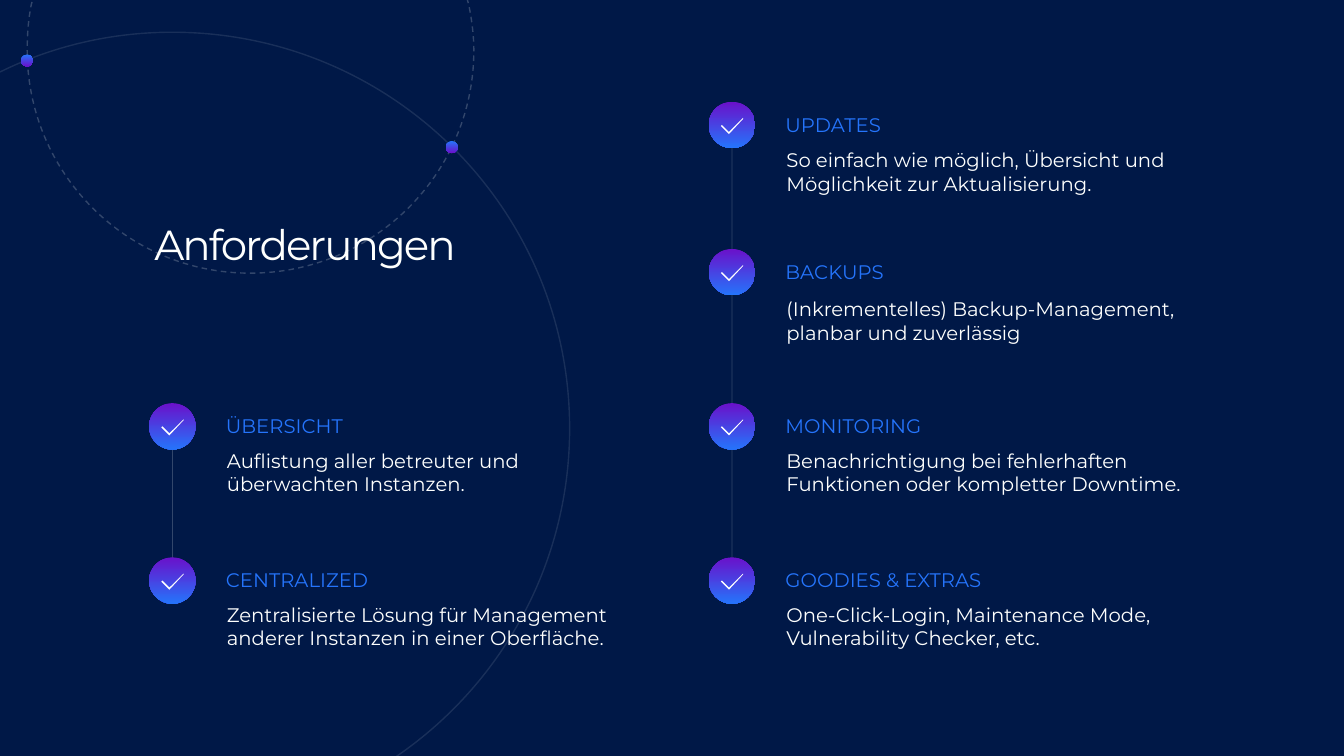
from lxml import etree
from pptx import Presentation
from pptx.dml.color import RGBColor
from pptx.enum.dml import MSO_LINE
from pptx.enum.shapes import MSO_CONNECTOR, MSO_SHAPE
from pptx.enum.text import MSO_ANCHOR, MSO_AUTO_SIZE, PP_ALIGN
from pptx.oxml.ns import qn
from pptx.util import Inches, Pt

FONT = "Montserrat"
NAVY, WHITE, BLUE, PURPLE = "001847", "FEFFFE", "2574FB", "6A11CA"
ICON_SIZE = 0.46
DOT_SIZE = 0.12
CHECK_MARK = [(0.34, 0.16), (0.2, 0.3), (0.13, 0.23), (0.12, 0.24),
              (0.2, 0.32), (0.21, 0.31), (0.34, 0.17)]
SMALL_ORBIT = [
    [(0.35, -0.1)],
    [(4.61, -0.1)],
    [(4.65, 0.05)],
    [(4.68, 0.2), (4.7, 0.35), (4.7, 0.5)],
    [(4.7, 1.72), (3.71, 2.71), (2.48, 2.71)],
    [(1.26, 2.71), (0.27, 1.72), (0.27, 0.5)],
    [(0.27, 0.35), (0.28, 0.2), (0.31, 0.05)],
]
LARGE_ORBIT = [
    [(1.71, 0.32)],
    [(3.89, 0.32), (5.65, 2.08), (5.65, 4.25)],
    [(5.65, 5.61), (4.96, 6.81), (3.91, 7.52)],
    [(3.64, 7.68)],
    [(-0.12, 7.68)],
    [(-0.12, 0.77)],
    [(0.01, 0.71)],
    [(0.52, 0.46), (1.1, 0.32), (1.71, 0.32)],
]
COLUMNS = [
    (7.03, [
        (1.01, 1.12, 1.47, "UPDATES",
         "So einfach wie möglich, Übersicht und Möglichkeit zur Aktualisierung."),
        (2.47, 2.58, 2.95, "BACKUPS",
         "(Inkrementelles) Backup-Management, planbar und zuverlässig"),
        (4, 4.11, 4.45, "MONITORING",
         "Benachrichtigung bei fehlerhaften Funktionen oder kompletter Downtime."),
        (5.53, 5.63, 5.98, "GOODIES & EXTRAS",
         "One-Click-Login, Maintenance Mode, Vulnerability Checker, etc."),
    ]),
    (1.48, [
        (4, 4.11, 4.45, "ÜBERSICHT",
         "Auflistung aller betreuter und überwachten Instanzen."),
        (5.53, 5.63, 5.98, "CENTRALIZED",
         "Zentralisierte Lösung für Management anderer Instanzen in einer Oberfläche."),
    ]),
]


def color(hex_value):
    """Turn a hex string into a colour."""
    return RGBColor.from_string(hex_value)


def style_line(shape, width, opacity):
    """Give a shape or connector a translucent white line."""
    shape.line.color.rgb = color(WHITE)
    shape.line.width = Pt(width)
    color_element = shape.line._get_or_add_ln().find(".//" + qn("a:srgbClr"))
    etree.SubElement(color_element, qn("a:alpha"), val=str(opacity * 1000))


def add_outline(shapes, points):
    """Add a closed freeform through points given in inches."""
    corners = [(Inches(x), Inches(y)) for x, y in points]
    builder = shapes.build_freeform(*corners[0])
    builder.add_line_segments(corners[1:], close=True)
    shape = builder.convert_to_shape()
    shape.shadow.inherit = False
    return shape


def add_orbit(shapes, segments, opacity):
    """Add an outline whose three-point segments are Bézier curves."""
    orbit = add_outline(shapes, [point for segment in segments for point in segment])
    lines = iter(orbit._element.findall(".//" + qn("a:lnTo")))
    for segment in segments[1:]:
        pieces = [next(lines) for _ in segment]
        if len(pieces) == 3:
            curve = etree.Element(qn("a:cubicBezTo"))
            pieces[0].addprevious(curve)
            for piece in pieces:
                curve.append(piece[0])
                piece.getparent().remove(piece)
    orbit.fill.background()
    style_line(orbit, 1, opacity)
    return orbit


def add_gradient_circle(shapes, left, top, size, top_color, bottom_color):
    """Add a circle with a vertical gradient."""
    circle = shapes.add_shape(MSO_SHAPE.OVAL, Inches(left), Inches(top),
                              Inches(size), Inches(size))
    circle.shadow.inherit = False
    circle.line.fill.background()
    circle.fill.gradient()
    circle.fill.gradient_angle = 270
    for stop, hex_value in zip(circle.fill.gradient_stops, (top_color, bottom_color)):
        stop.color.rgb = color(hex_value)


def add_check_icon(slide, left, top):
    """Add a grouped gradient circle with a check mark."""
    shapes = slide.shapes.add_group_shape().shapes
    add_gradient_circle(shapes, left, top, ICON_SIZE, PURPLE, BLUE)
    check = add_outline(shapes, [(left + x, top + y) for x, y in CHECK_MARK])
    check.fill.solid()
    check.fill.fore_color.rgb = color("FFFFFF")
    check.line.fill.background()


def add_timeline(slide, x, top, bottom):
    """Add the thin vertical line behind a column of icons."""
    line = slide.shapes.add_connector(MSO_CONNECTOR.STRAIGHT, Inches(x), Inches(top),
                                      Inches(x), Inches(bottom))
    style_line(line, 0.5, 20)
    etree.SubElement(line._element.spPr, qn("a:effectLst"))


def fill_frame(frame, text, size, hex_value, wrap=True):
    """Write one left-aligned paragraph into a frame without margins."""
    frame.margin_left = frame.margin_right = 0
    frame.margin_top = frame.margin_bottom = 0
    frame.word_wrap = wrap
    frame.vertical_anchor = MSO_ANCHOR.TOP
    paragraph = frame.paragraphs[0]
    paragraph.text = text
    paragraph.alignment = PP_ALIGN.LEFT
    paragraph.font.name = FONT
    paragraph.font.size = Pt(size)
    paragraph.font.color.rgb = color(hex_value)
    return paragraph


def add_text(slide, left, top, width, height, text, hex_value, wrap):
    """Add a text box that grows with its text."""
    box = slide.shapes.add_textbox(Inches(left), Inches(top), Inches(width), Inches(height))
    fill_frame(box.text_frame, text, 14, hex_value, wrap)
    box.text_frame.auto_size = MSO_AUTO_SIZE.SHAPE_TO_FIT_TEXT


def add_background(slide):
    """Draw the two orbits and the dots where they cross."""
    small_orbit = add_orbit(slide.shapes, SMALL_ORBIT, 20)
    small_orbit.line.dash_style = MSO_LINE.DASH
    add_orbit(slide.shapes, LARGE_ORBIT, 10)
    for left, top in [(4.42, 1.4), (0.21, 0.54)]:
        add_gradient_circle(slide.shapes, left, top, DOT_SIZE, BLUE, PURPLE)


def format_title(slide):
    """Place the title above the background shapes."""
    title = slide.shapes.title
    title.left, title.top = Inches(1.53), Inches(2.28)
    title.width, title.height = Inches(4.79), Inches(1.4)
    paragraph = fill_frame(title.text_frame, "Anforderungen", 30, WHITE)
    title.text_frame.auto_size = MSO_AUTO_SIZE.NONE
    paragraph.line_spacing = 0.75
    paragraph.runs[0].font._element.set("spc", "-140")
    title._element.getparent().append(title._element)


def add_column(slide, left, entries):
    """Add a column of requirements joined by a line."""
    half = ICON_SIZE / 2
    add_timeline(slide, left + half, entries[0][0] + half, entries[-1][0] + half)
    for icon_top, label_top, body_top, label, body in entries:
        add_check_icon(slide, left, icon_top)
        label_width = 0.14 * len(label)
        add_text(slide, left + 0.76, label_top, label_width, 0.25, label, BLUE, False)
        add_text(slide, left + 0.77, body_top, 4.11, 0.5, body, WHITE, True)


def main():
    """Build and save the slide."""
    presentation = Presentation()
    presentation.slide_width, presentation.slide_height = Inches(13.33), Inches(7.5)
    slide = presentation.slides.add_slide(presentation.slide_layouts[5])
    slide.background.fill.solid()
    slide.background.fill.fore_color.rgb = color(NAVY)
    add_background(slide)
    format_title(slide)
    for left, entries in COLUMNS:
        add_column(slide, left, entries)
    presentation.save("out.pptx")


if __name__ == "__main__":
    main()
